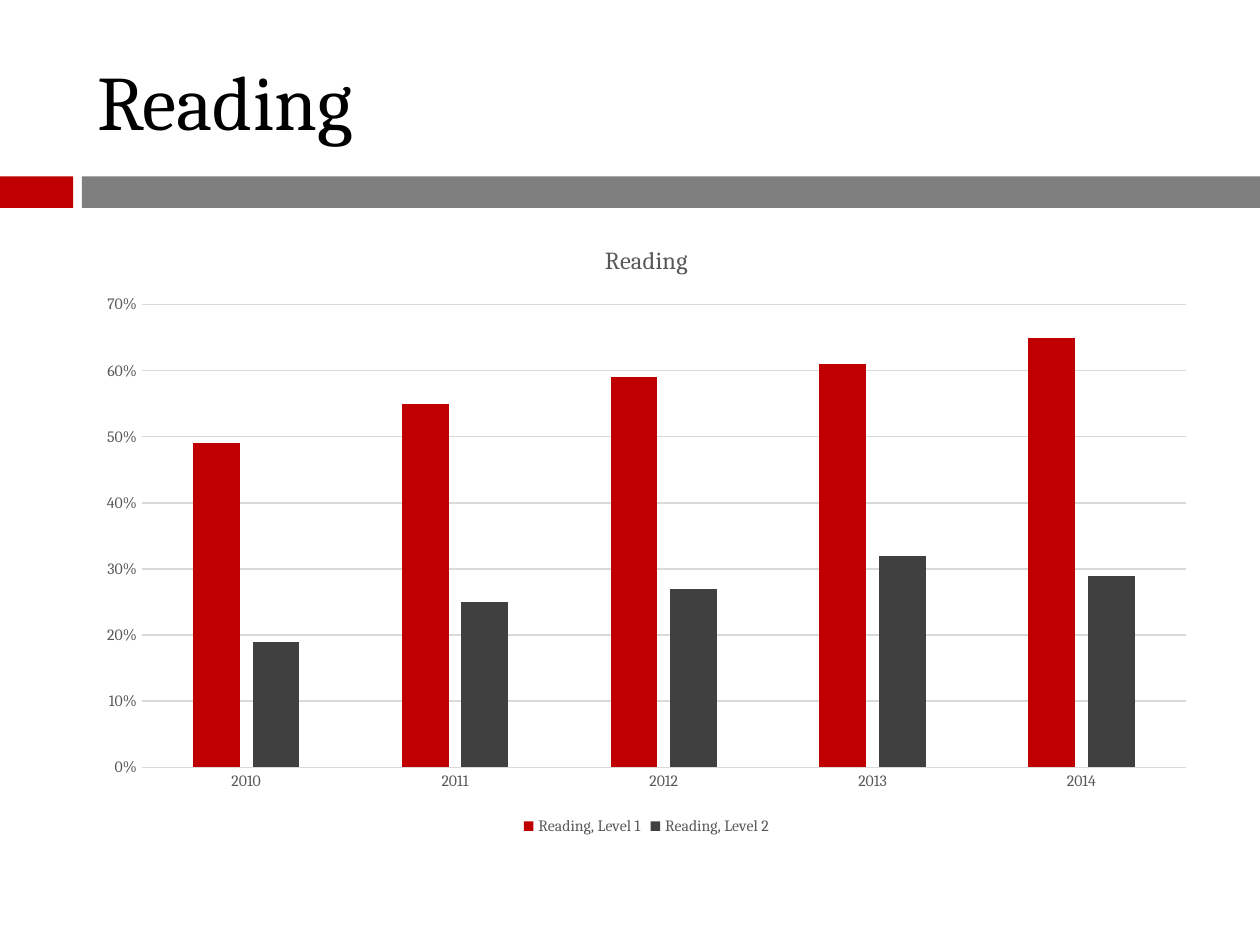
"""Build the Reading results slide: title, divider bars and a clustered column chart."""
from pptx import Presentation
from pptx.chart.data import CategoryChartData
from pptx.dml.color import RGBColor
from pptx.enum import chart as charts, shapes, text
from pptx.util import Inches, Pt

COLORS = {"red": "C00000", "gray": "7F7F7F", "dark": "404040",
          "label": "595959", "grid": "D9D9D9", "title": "000000"}
LEFT, WIDTH = 0.67, 8.92


def style_font(font, size, color):
    for name, value in {"name": "Cambria", "size": Pt(size), "bold": False}.items():
        setattr(font, name, value)
    font.color.rgb = RGBColor.from_string(COLORS[color])


def paint(fill, color):
    fill.solid()
    fill.fore_color.rgb = RGBColor.from_string(COLORS[color])


deck = Presentation()
deck.slide_width, deck.slide_height = Inches(10), Inches(7.5)
page = deck.slides.add_slide(deck.slide_layouts[5])

for left, width, color in ((0, 0.58, "red"), (0.65, 9.35, "gray")):
    bar = page.shapes.add_shape(shapes.MSO_SHAPE.RECTANGLE, Inches(left),
                                Inches(1.4), Inches(width), Inches(0.25))
    bar.shadow.inherit = False
    paint(bar.fill, color)
    bar.line.fill.background()

title = page.shapes.title
for name, value in {"left": LEFT, "top": 0.25, "width": WIDTH, "height": 1.08}.items():
    setattr(title, name, Inches(value))
title.text_frame.text = "Reading"
title.text_frame.vertical_anchor = text.MSO_ANCHOR.MIDDLE
para = title.text_frame.paragraphs[0]
para.alignment = text.PP_ALIGN.LEFT
style_font(para.runs[0].font, 44, "title")

levels = {
    "Reading, Level 1": ("red", (0.49, 0.55, 0.59, 0.61, 0.65)),
    "Reading, Level 2": ("dark", (0.19, 0.25, 0.27, 0.32, 0.29)),
}
data = CategoryChartData(number_format="0%")
data.categories = [str(year) for year in range(2010, 2015)]
for name, (color, values) in levels.items():
    data.add_series(name, values)
chart = page.shapes.add_chart(charts.XL_CHART_TYPE.COLUMN_CLUSTERED, Inches(LEFT),
                              Inches(1.75), Inches(WIDTH), Inches(4.92), data).chart
style_font(chart.font, 10, "title")

chart.has_title = True
chart.chart_title.include_in_layout = False
heading = chart.chart_title.text_frame
heading.text = "Reading"
style_font(heading.paragraphs[0].runs[0].font, 14, "label")

chart.has_legend = True
chart.legend.position = charts.XL_LEGEND_POSITION.BOTTOM
chart.legend.include_in_layout = False
style_font(chart.legend.font, 9, "label")

plot = chart.plots[0]
for name, value in {"gap_width": 219, "overlap": -27, "vary_by_categories": False}.items():
    setattr(plot, name, value)
for series, (color, values) in zip(plot.series, levels.values()):
    paint(series.format.fill, color)
    series.invert_if_negative = False

years, shares = chart.category_axis, chart.value_axis
for axis in (years, shares):
    axis.major_tick_mark = axis.minor_tick_mark = charts.XL_TICK_MARK.NONE
    style_font(axis.tick_labels.font, 9, "label")
for name, value in {"minimum_scale": 0, "maximum_scale": 0.7, "major_unit": 0.1,
                    "has_major_gridlines": True}.items():
    setattr(shares, name, value)
shares.tick_labels.number_format = "0%"
shares.tick_labels.number_format_is_linked = False
shares.format.line.fill.background()
for line in (years.format.line, shares.major_gridlines.format.line):
    line.width = Pt(0.75)
    paint(line.fill, "grid")

deck.save("out.pptx")
